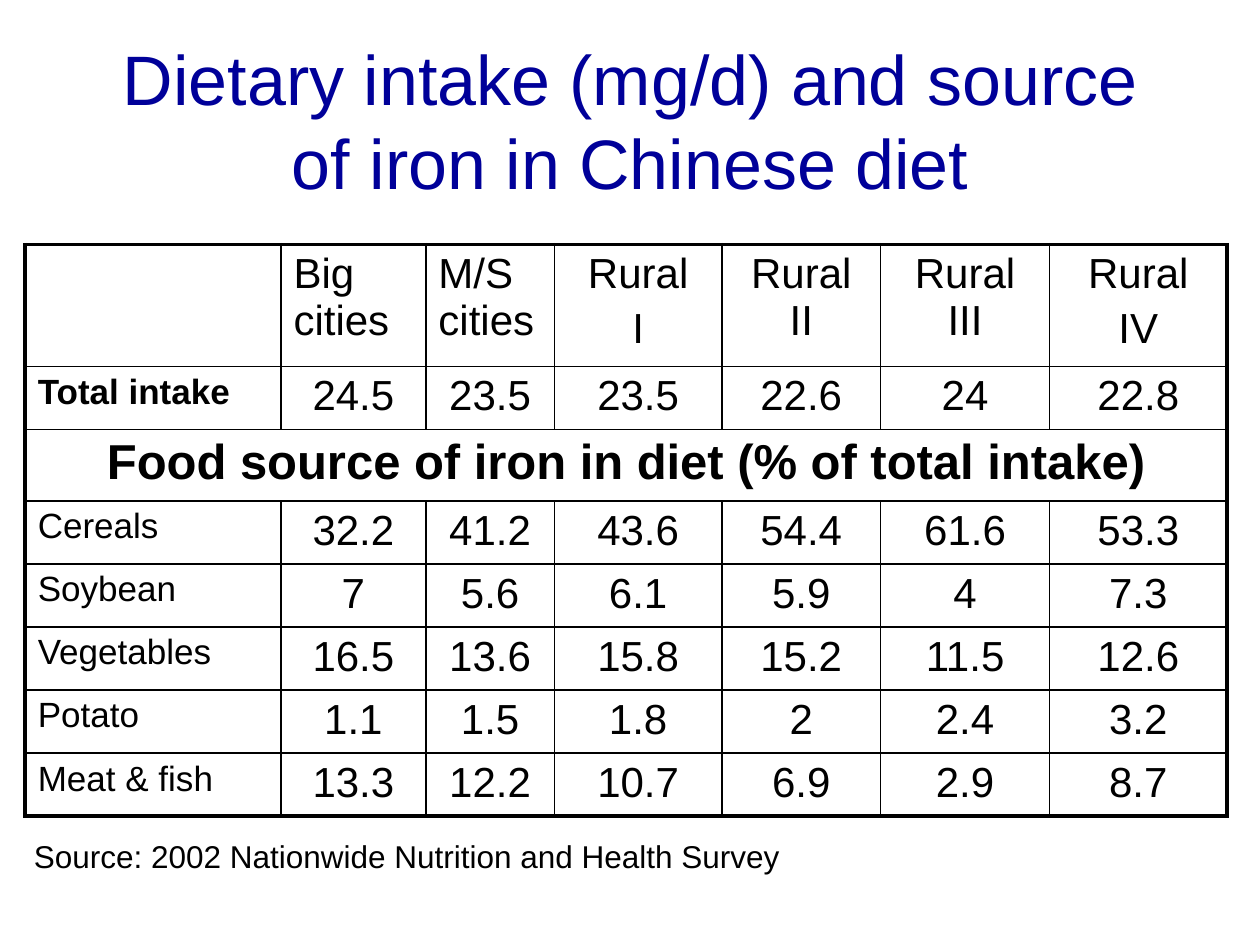
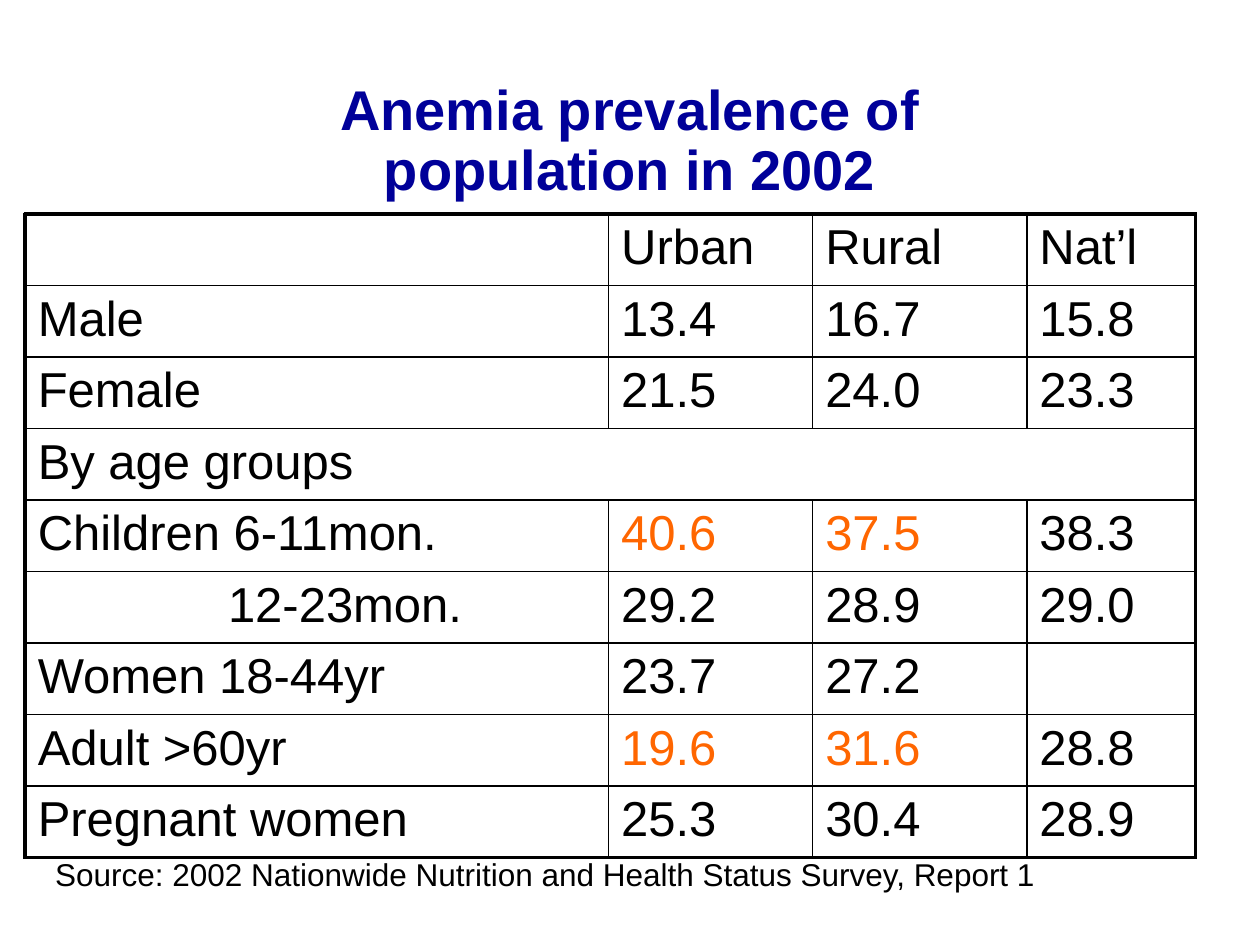
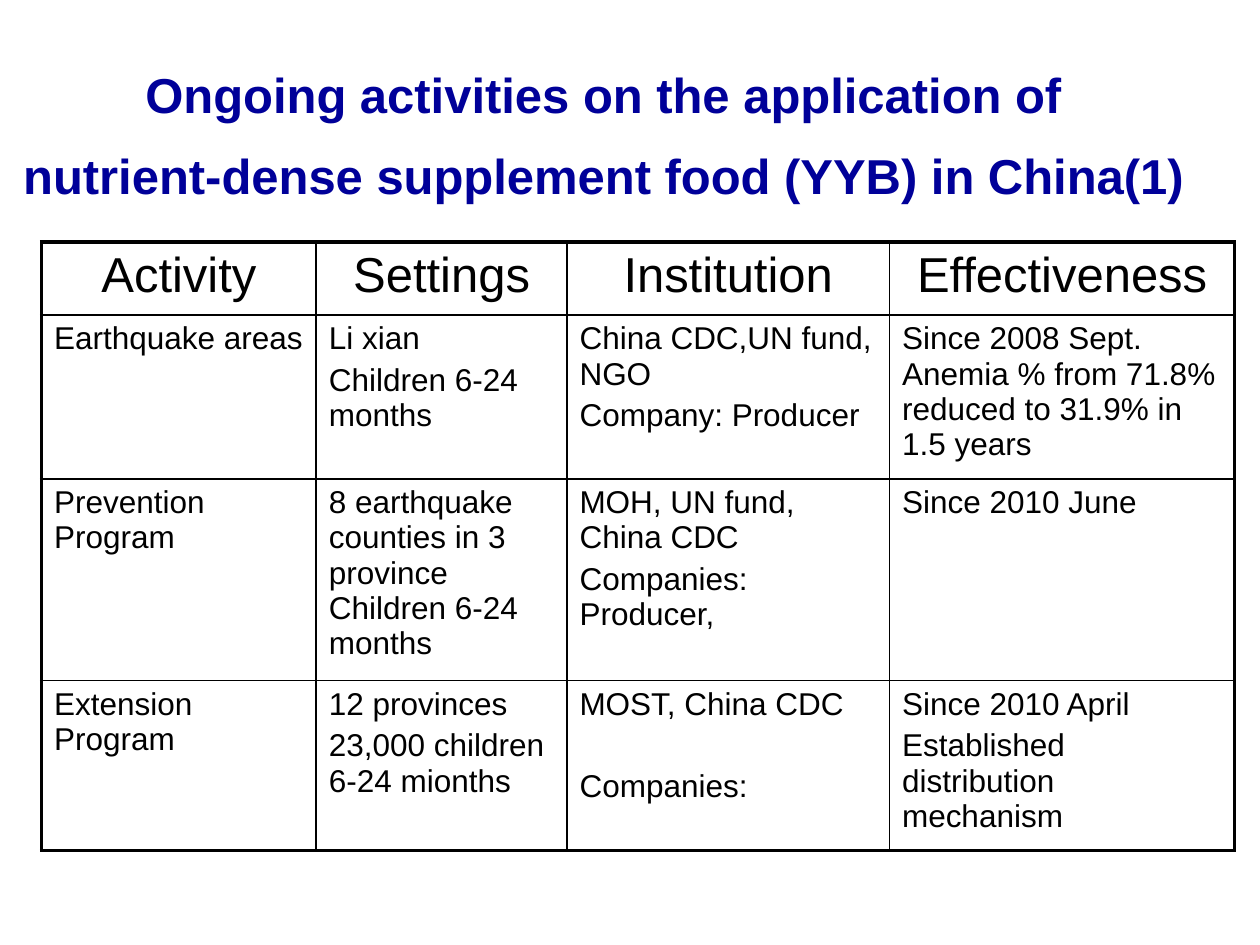
from lxml.etree import SubElement
from pptx import Presentation
from pptx.dml.color import RGBColor
from pptx.enum.text import MSO_ANCHOR, PP_ALIGN
from pptx.oxml.ns import qn
from pptx.util import Pt

PX = 9144  # EMU per px, 100 px to the inch
FONT = "Arial"
NAVY = RGBColor(0x00, 0x00, 0x99)
BLACK = RGBColor(0x00, 0x00, 0x00)
ORANGE = RGBColor(0xFF, 0x66, 0x00)
THIN, THICK = 1, 2.25
LEFT, CENTER = PP_ALIGN.LEFT, PP_ALIGN.CENTER


def write(tf, text, size=18, color=BLACK, bold=False, align=LEFT, gap=None, line=None):
    """Fill a text frame, one paragraph a line; gap is the space between them in points."""
    tf.word_wrap = True
    for i, words in enumerate(text.split("\n")):
        p = tf.add_paragraph() if i else tf.paragraphs[0]
        p.alignment = align
        p.space_before = Pt((0.2 * size if gap is None else gap) if i else 0)
        if line:
            p.line_spacing = line
        r = p.add_run()
        r.text = words
        r.font.name, r.font.size, r.font.bold = FONT, Pt(size), bold
        r.font.color.rgb = color


def draw_edge(cell, side, width):
    ln = SubElement(cell._tc.get_or_add_tcPr(), qn(f"a:ln{side}"), w=str(Pt(width)))
    fill = SubElement(ln, qn("a:solidFill"))
    SubElement(fill, qn("a:srgbClr"), val=str(BLACK))


class Deck:
    def __init__(self):
        self.prs = Presentation()
        self.prs.slide_width, self.prs.slide_height = 1000 * PX, 750 * PX
        self.s = None

    def slide(self):
        self.s = self.prs.slides.add_slide(self.prs.slide_layouts[6])

    def text(self, box, words, anchor=MSO_ANCHOR.TOP, **fmt):
        sp = self.s.shapes.add_textbox(*(v * PX for v in box))
        sp.text_frame.vertical_anchor = anchor
        write(sp.text_frame, words, **fmt)

    def title(self, box, words, **fmt):
        self.text(box, words, color=NAVY, align=CENTER, **fmt)

    def table(self, left, top, widths, heights, rows, cell_format):
        """Draw a ruled table; a row with a single entry spans all columns."""
        frame = self.s.shapes.add_table(
            len(rows), len(widths), left * PX, top * PX,
            sum(widths) * PX, sum(heights) * PX)
        tbl = frame.table
        tbl.first_row = tbl.horz_banding = False
        for column, width in zip(tbl.columns, widths):
            column.width = width * PX
        for row, height in zip(tbl.rows, heights):
            row.height = height * PX
        last_r, last_c = len(rows) - 1, len(widths) - 1
        for r, entries in enumerate(rows):
            if len(entries) == 1:
                tbl.cell(r, 0).merge(tbl.cell(r, last_c))
            for c in range(len(widths)):
                cell = tbl.cell(r, c)
                outer = {"L": c == 0, "R": c == last_c or cell.is_merge_origin,
                         "T": r == 0, "B": r == last_r}
                for side, is_outer in outer.items():
                    if is_outer or side in "TB" or not cell.is_spanned:
                        draw_edge(cell, side, THICK if is_outer else THIN)
                cell.fill.background()
                if c < len(entries) and entries[c]:
                    write(cell.text_frame, entries[c], **cell_format(r, c))
        return tbl


def iron_intake(deck):
    deck.slide()
    deck.title((75, 44, 850, 102), "Dietary intake (mg/d) and source of iron in Chinese diet",
               anchor=MSO_ANCHOR.MIDDLE, size=40)
    rows = [
        ["", "Big cities", "M/S cities", "Rural\nI", "Rural II", "Rural III", "Rural\nIV"],
        ["Total intake", "24.5", "23.5", "23.5", "22.6", "24", "22.8"],
        ["Food source of iron in diet (% of total intake)"],
        ["Cereals", "32.2", "41.2", "43.6", "54.4", "61.6", "53.3"],
        ["Soybean", "7", "5.6", "6.1", "5.9", "4", "7.3"],
        ["Vegetables", "16.5", "13.6", "15.8", "15.2", "11.5", "12.6"],
        ["Potato", "1.1", "1.5", "1.8", "2", "2.4", "3.2"],
        ["Meat & fish", "13.3", "12.2", "10.7", "6.9", "2.9", "8.7"],
    ]

    def cell_format(r, c):
        if len(rows[r]) == 1:
            return dict(size=28, bold=True, align=CENTER)
        if c == 0:
            return dict(size=20, bold=r == 1)
        return dict(size=24, align=LEFT if r == 0 and c < 3 else CENTER)

    deck.table(20, 194, [203, 115, 102, 133, 126, 134, 141],
               [90, 47, 53] + [47] * 5, rows, cell_format)
    deck.text((17, 659, 672, 40), "Source: 2002 Nationwide Nutrition and Health Survey")


def anemia_prevalence(deck):
    deck.slide()
    deck.title((150, 60, 700, 118), "Anemia prevalence of population in 2002",
               size=32, bold=True, line=0.9)
    rows = [
        ["", "Urban", "Rural", "Nat’l"],
        ["Male", "13.4", "16.7", "15.8"],
        ["Female", "21.5", "24.0", "23.3"],
        ["By age groups"],
        ["Children 6-11mon.", "40.6", "37.5", "38.3"],
        ["12-23mon.", "29.2", "28.9", "29.0"],
        ["Women 18-44yr", "23.7", "27.2", ""],
        ["Adult >60yr", "19.6", "31.6", "28.8"],
        ["Pregnant women", "25.3", "30.4", "28.9"],
    ]
    highlighted_rows = (4, 7)

    def cell_format(r, c):
        marked = r in highlighted_rows and c in (1, 2)
        return dict(size=28, color=ORANGE if marked else BLACK)

    tbl = deck.table(20, 170, [463, 162, 170, 134], [55] * len(rows), rows, cell_format)
    tbl.cell(5, 0).margin_left = 161 * PX
    deck.text((34, 674, 800, 40),
              "Source: 2002 Nationwide Nutrition and Health Status Survey, Report 1")


def ongoing_activities(deck):
    deck.slide()
    deck.title((-28, 44, 1014, 125),
               "Ongoing activities on the application of\n"
               "nutrient-dense supplement food (YYB) in China(1)",
               anchor=MSO_ANCHOR.MIDDLE, size=28, bold=True, gap=12.4)
    rows = [
        ["Activity", "Settings", "Institution", "Effectiveness"],
        ["Earthquake areas", "Li xian\nChildren 6-24 months",
         "China CDC,UN fund, NGO\nCompany: Producer",
         "Since 2008 Sept. Anemia % from 71.8% reduced to 31.9% in 1.5 years"],
        ["Prevention Program", "8 earthquake counties in 3 province Children 6-24 months",
         "MOH, UN fund, China CDC\nCompanies: Producer,", "Since 2010 June"],
        ["Extension Program", "12 provinces\n23,000 children 6-24 mionths",
         "MOST, China CDC\nCompanies:",
         "Since 2010 April\nEstablished distribution mechanism"],
    ]

    def cell_format(r, c):
        if r == 0:
            return dict(size=28, align=CENTER)
        return dict(size=18, gap=26.5 if (r, c) == (3, 2) else None)

    deck.table(33, 192, [218, 199, 256, 274], [58, 121, 150, 127], rows, cell_format)


def main():
    deck = Deck()
    iron_intake(deck)
    anemia_prevalence(deck)
    ongoing_activities(deck)
    deck.prs.save("out.pptx")


if __name__ == "__main__":
    main()
